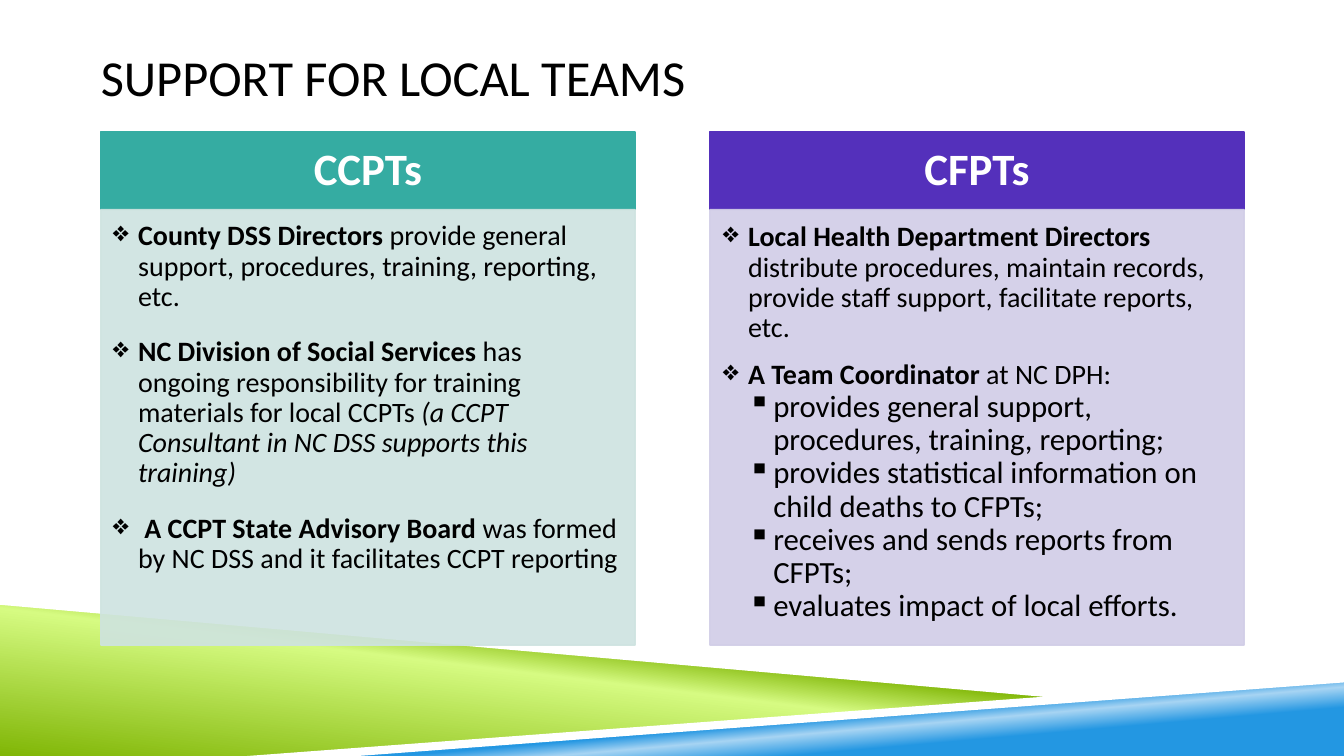
from lxml import etree
from pptx import Presentation
from pptx.dml.color import RGBColor
from pptx.enum import shapes, text
from pptx.oxml import ns
from pptx.util import Inches, Pt


def color(value):
    return RGBColor.from_string(value)


class SlideBuilder:
    font_name = "Calibri"

    def __init__(self, slide):
        self.slide = slide

    def polygon(self, points, fill=None, stops=None, angle=0):
        corners = [(Inches(x), Inches(y)) for x, y in points]
        builder = self.slide.shapes.build_freeform(*corners[0])
        builder.add_line_segments(corners[1:], close=True)
        shape = builder.convert_to_shape()
        shape.shadow.inherit = False
        shape.line.fill.background()
        if fill:
            shape.fill.solid()
            shape.fill.fore_color.rgb = color(fill)
        else:
            self.gradient(shape, stops, angle)

    def gradient(self, shape, stops, angle):
        shape.fill.gradient()
        properties = shape.fill._xPr.find(ns.qn("a:gradFill"))
        for child in list(properties):
            properties.remove(child)
        stop_list = etree.SubElement(properties, ns.qn("a:gsLst"))
        for position, value in stops:
            stop = etree.SubElement(stop_list, ns.qn("a:gs"), pos=str(position * 1000))
            etree.SubElement(stop, ns.qn("a:srgbClr"), val=value)
        etree.SubElement(properties, ns.qn("a:lin"), ang=str(angle * 60000), scaled="0")

    def panel(self, left, top, width, height, fill, opacity=100):
        shape = self.slide.shapes.add_shape(
            shapes.MSO_SHAPE.RECTANGLE, *map(Inches, (left, top, width, height)))
        shape.shadow.inherit = False
        shape.fill.solid()
        shape.fill.fore_color.rgb = color(fill)
        shape.line.color.rgb = color(fill)
        shape.line.width = Pt(1)
        if opacity < 100:
            for tone in shape._element.spPr.iter(ns.qn("a:srgbClr")):
                etree.SubElement(tone, ns.qn("a:alpha"), val=str(opacity * 1000))
        return shape

    def frame(self, shape, insets, anchor):
        frame = shape.text_frame
        frame.word_wrap = True
        frame.vertical_anchor = anchor
        (frame.margin_left, frame.margin_top,
         frame.margin_right, frame.margin_bottom) = map(Inches, insets)
        return frame

    def style(self, paragraph, size, fill, align=text.PP_ALIGN.LEFT, bold=None):
        paragraph.alignment = align
        paragraph.font.name = self.font_name
        paragraph.font.size = Pt(size)
        paragraph.font.color.rgb = color(fill)
        paragraph.font.bold = bold

    def title(self, left, top, width, height, words):
        box = self.slide.shapes.add_textbox(*map(Inches, (left, top, width, height)))
        frame = self.frame(box, (0, 0.05, 0, 0.05), text.MSO_ANCHOR.MIDDLE)
        frame.text = words
        self.style(frame.paragraphs[0], 36, "000000")

    def heading(self, left, top, width, height, fill, words):
        shape = self.panel(left, top, width, height, fill)
        frame = self.frame(shape, (0.25, 0.14, 0.25, 0.14), text.MSO_ANCHOR.MIDDLE)
        frame.text = words
        frame.paragraphs[0].line_spacing = 0.9
        self.style(frame.paragraphs[0], 32, "FFFFFF", text.PP_ALIGN.CENTER, True)

    def bullets(self, left, top, width, height, fill, insets, items):
        shape = self.panel(left, top, width, height, fill, 90)
        frame = self.frame(shape, insets, text.MSO_ANCHOR.TOP)
        for index, (level, space_after, runs) in enumerate(items):
            paragraph = frame.add_paragraph() if index else frame.paragraphs[0]
            properties = paragraph._p.get_or_add_pPr()
            properties.set("marL", str(Inches(0.25 * level)))
            properties.set("indent", str(Inches(-0.25)))
            etree.SubElement(properties, ns.qn("a:buChar"), char="❖▪"[level - 1])
            paragraph.line_spacing = 0.9
            paragraph.space_after = Pt(space_after)
            self.style(paragraph, 18 + 2 * level, "000000")
            for words, emphasis in runs:
                run = paragraph.add_run()
                run.text = words
                if emphasis == "bold":
                    run.font.bold = True
                elif emphasis == "italic":
                    run.font.italic = True


CCPT_ITEMS = [
    (1, 18, [("County DSS Directors ", "bold"),
             ("provide general support, procedures, training, reporting, etc.", "")]),
    (1, 18, [("NC Division of Social Services ", "bold"),
             ("has ongoing responsibility for training materials for local CCPTs ", ""),
             ("(a CCPT Consultant in NC DSS supports this training)", "italic")]),
    (1, 18, [(" A CCPT State Advisory Board ", "bold"),
             ("was formed by NC DSS and it facilitates CCPT reporting", "")]),
]
CFPT_ITEMS = [
    (1, 12, [("Local Health Department Directors ", "bold"),
             ("distribute procedures, maintain records, provide staff support, "
              "facilitate reports, etc.", "")]),
    (1, 0, [("A Team Coordinator ", "bold"), ("at NC DPH:", "")]),
] + [(2, 0, [(duty, "")]) for duty in (
    "provides general support, procedures, training, reporting;",
    "provides statistical information on child deaths to CFPTs;",
    "receives and sends reports from CFPTs;",
    "evaluates impact of local efforts.",
)]
COLUMNS = [
    (1, "CCPTs", "35ACA2", "CEE3E0", (0.12, 0.12, 0.16, 0.17), CCPT_ITEMS),
    (7.04, "CFPTs", "5430BB", "D1CDE7", (0.13, 0.13, 0.17, 0.19), CFPT_ITEMS),
]


def main():
    presentation = Presentation()
    presentation.slide_width = Inches(13.33)
    presentation.slide_height = Inches(7.5)
    builder = SlideBuilder(presentation.slides.add_slide(presentation.slide_layouts[6]))

    builder.polygon([(0, 5.97), (10.56, 6.92), (2.67, 7.5), (0, 7.5)],
                    stops=[(0, "80B606"), (52, "D6FB82"), (66, "80B606")], angle=277)
    builder.polygon([(2.64, 7.5), (13.33, 6.72), (13.33, 7.5)],
                    stops=[(28, "2397E2"), (40, "A7D5F3"), (48, "2397E2")], angle=265)
    builder.polygon([(0, 5.92), (0, 6), (10.54, 6.93), (11.09, 6.9)], fill="FFFFFF")
    builder.polygon([(13.33, 6.69), (2.45, 7.5), (3.55, 7.5), (13.33, 6.77)], fill="FFFFFF")

    builder.title(1, 0.3, 11.33, 0.92, "SUPPORT FOR LOCAL TEAMS")
    for left, name, dark, light, insets, items in COLUMNS:
        builder.heading(left, 1.31, 5.3, 0.77, dark, name)
        builder.bullets(left, 2.08, 5.3, 4.32, light, insets, items)

    presentation.save("out.pptx")


if __name__ == "__main__":
    main()
